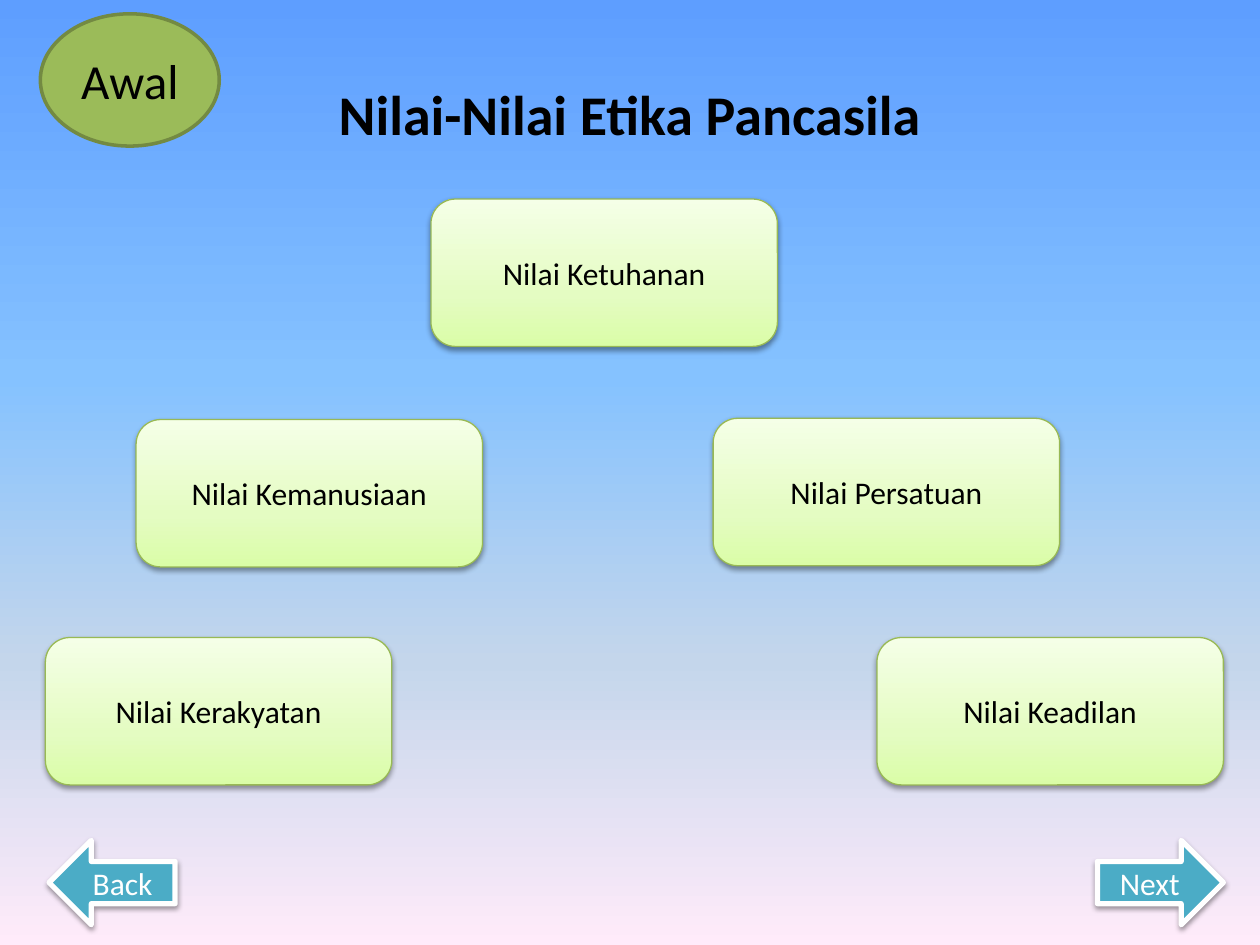
from lxml.etree import SubElement
from pptx import Presentation
from pptx.dml.color import RGBColor
from pptx.enum.shapes import MSO_SHAPE as Preset
from pptx.enum.text import MSO_ANCHOR as Anchor, PP_ALIGN as Align
from pptx.oxml.ns import qn
from pptx.util import Inches, Pt

BLACK = RGBColor(0x00, 0x00, 0x00)
WHITE = RGBColor(0xFF, 0xFF, 0xFF)
GREEN = RGBColor(0x9B, 0xBB, 0x59)
DARK_GREEN = RGBColor(0x73, 0x8A, 0x42)
EDGE_GREEN = RGBColor(0x98, 0xB9, 0x55)
TEAL = RGBColor(0x4B, 0xAC, 0xC6)
SKY = [
    (0, RGBColor(0x5E, 0x9E, 0xFF)),
    (40, RGBColor(0x85, 0xC2, 0xFF)),
    (70, RGBColor(0xC4, 0xD6, 0xEB)),
    (100, RGBColor(0xFF, 0xEB, 0xFA)),
]
LIME = [
    (0, RGBColor(0xDA, 0xFD, 0xA7)),
    (35, RGBColor(0xE4, 0xFC, 0xC2)),
    (100, RGBColor(0xF5, 0xFF, 0xE7)),
]
VALUE_SIZE = (2.75, 1.17)
ARROW_SIZE = (1, 0.67)


class SlideBuilder:
    """Draws styled elements on the current slide."""

    font = "Calibri"

    def __init__(self, slide):
        self.slide = slide

    def gradient(self, fill, owner, stops, angle):
        fill.gradient()
        fill.gradient_angle = angle
        stop_list = owner.find(".//" + qn("a:gsLst"))
        for old_stop in list(stop_list):
            stop_list.remove(old_stop)
        for percent, color in stops:
            stop = SubElement(stop_list, qn("a:gs"), pos=str(percent * 1000))
            SubElement(stop, qn("a:srgbClr"), val=str(color))

    def backdrop(self, stops):
        self.gradient(self.slide.background.fill, self.slide.element, stops, 270)

    def label(self, frame, words, size, color, bold=False):
        frame.word_wrap = True
        paragraph = frame.paragraphs[0]
        paragraph.alignment = Align.CENTER
        run = paragraph.add_run()
        run.text = words
        run.font.name = self.font
        run.font.size = Pt(size)
        run.font.bold = bold
        run.font.color.rgb = color

    def title(self, words, left, top, width, height):
        box = self.slide.shapes.add_textbox(*map(Inches, (left, top, width, height)))
        self.label(box.text_frame, words, 32, BLACK, bold=True)

    def drop_shadow(self, shape):
        effects = shape.element.spPr.find(qn("a:effectLst"))
        shadow = SubElement(
            effects, qn("a:outerShdw"), blurRad=str(Pt(3.1)), dist=str(Pt(1.6)),
            dir="5400000", rotWithShape="0",
        )
        black = SubElement(shadow, qn("a:srgbClr"), val=str(BLACK))
        SubElement(black, qn("a:alpha"), val="38000")

    def button(self, preset, words, place, fill, line, weight,
               size=18, color=BLACK, shadow=True):
        shape = self.slide.shapes.add_shape(preset, *map(Inches, place))
        if isinstance(fill, list):
            self.gradient(shape.fill, shape.element.spPr, fill, 90)
        else:
            shape.fill.solid()
            shape.fill.fore_color.rgb = fill
        shape.line.color.rgb = line
        shape.line.width = Pt(weight)
        shape.shadow.inherit = False
        if shadow:
            self.drop_shadow(shape)
        shape.text_frame.vertical_anchor = Anchor.MIDDLE
        self.label(shape.text_frame, words, size, color)

    def value(self, words, left, top):
        self.button(Preset.ROUNDED_RECTANGLE, words, (left, top, *VALUE_SIZE),
                    LIME, EDGE_GREEN, 0.75)

    def arrow(self, preset, words, left):
        self.button(preset, words, (left, 6.67, *ARROW_SIZE), TEAL, WHITE, 3, color=WHITE)


def main():
    deck = Presentation()
    deck.slide_width, deck.slide_height = Inches(10), Inches(7.5)
    builder = SlideBuilder(deck.slides.add_slide(deck.slide_layouts[6]))
    builder.backdrop(SKY)
    builder.title("Nilai-Nilai Etika Pancasila", 0.5, 0.58, 9, 0.65)
    for words, left, top in [
        ("Nilai Kemanusiaan", 1.08, 3.33),
        ("Nilai Kerakyatan", 0.36, 5.06),
        ("Nilai Ketuhanan", 3.42, 1.58),
        ("Nilai Keadilan", 6.96, 5.06),
        ("Nilai Persatuan", 5.66, 3.32),
    ]:
        builder.value(words, left, top)
    builder.button(Preset.OVAL, "Awal", (0.32, 0.11, 1.42, 1.05), GREEN, DARK_GREEN, 2,
                   size=28, shadow=False)
    builder.arrow(Preset.RIGHT_ARROW, "Next", 8.71)
    builder.arrow(Preset.LEFT_ARROW, "Back", 0.39)
    deck.save("out.pptx")


if __name__ == "__main__":
    main()
